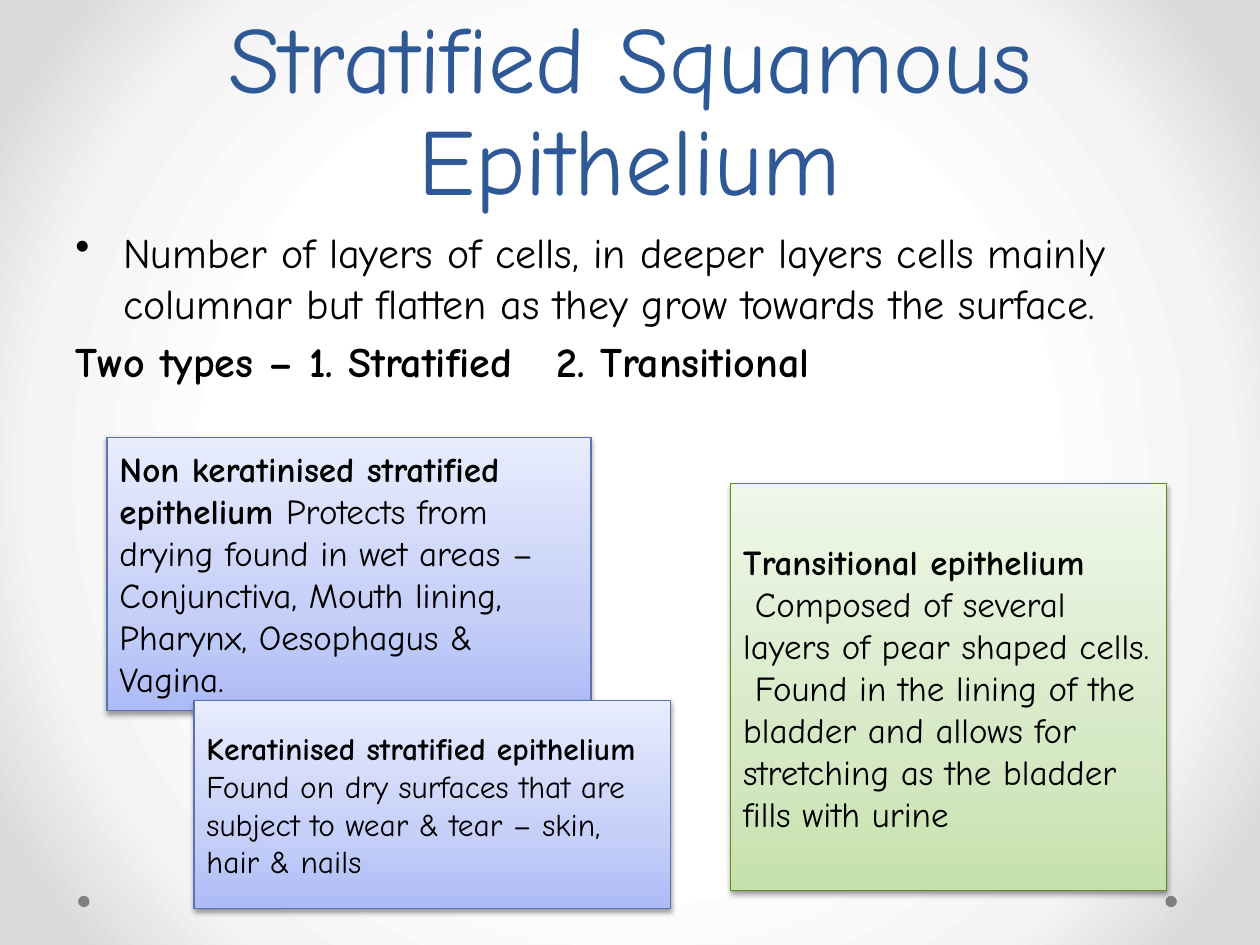
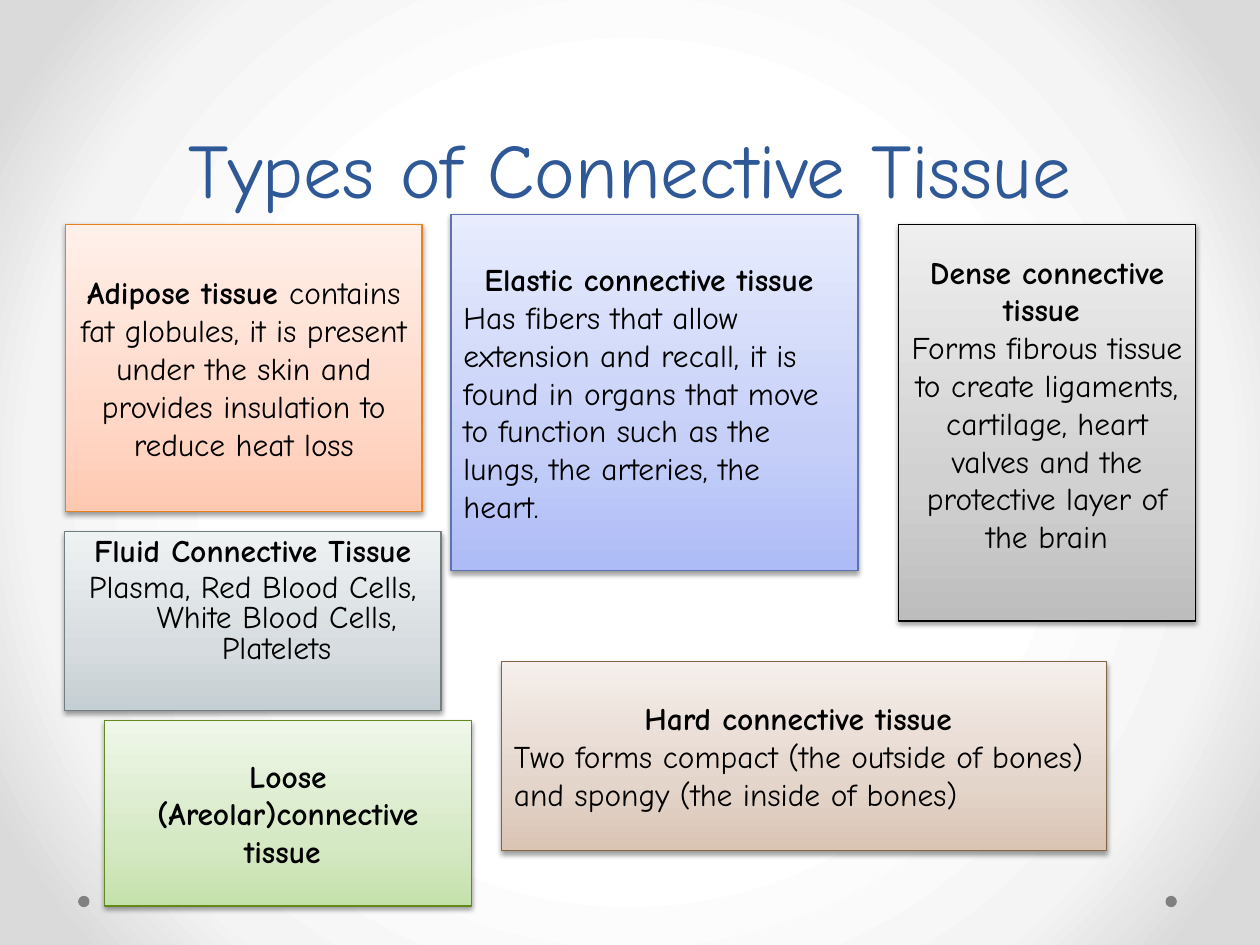
from dataclasses import dataclass
from typing import Any, NamedTuple

from lxml import etree
from pptx import Presentation
from pptx.dml.color import RGBColor
from pptx.enum.shapes import MSO_SHAPE
from pptx.enum.text import MSO_ANCHOR, PP_ALIGN
from pptx.oxml.ns import qn
from pptx.util import Inches, Pt

RECTANGLE = MSO_SHAPE.RECTANGLE
ELLIPSE = MSO_SHAPE.OVAL
LEFT = PP_ALIGN.LEFT
CENTER = PP_ALIGN.CENTER
TOP = MSO_ANCHOR.TOP
MIDDLE = MSO_ANCHOR.MIDDLE
BOTTOM = MSO_ANCHOR.BOTTOM

FONT = "Comic Neue"
TITLE_COLOR = "2F5897"
TEXT_COLOR = "000000"
DOT_COLOR = "808080"
BACKGROUND_STOPS = ((50, "FFFFFF"), (76, "F4F4F4"), (92, "DADADA"))
DOT_LEFTS = (9.25, 0.62)
HANGING = 0.38


class Box(NamedTuple):
    left: float
    top: float
    width: float
    height: float

    def lengths(self) -> tuple:
        return tuple(Inches(value) for value in self)


class Palette(NamedTuple):
    bottom: str
    middle: str
    top: str
    line: str

    def stops(self) -> tuple:
        return (0, self.bottom), (35, self.middle), (100, self.top)


class Phrase(NamedTuple):
    text: str
    bold: bool = False


@dataclass(frozen=True)
class TextLine:
    phrases: tuple[Phrase, ...]
    alignment: Any = LEFT
    hanging: float = 0
    bullet: str = ""
    tab: float = 0
    line_spacing: Any = None
    space_before: float = 0


@dataclass(frozen=True)
class Card:
    box: Box
    palette: Palette
    size: int
    lines: tuple[TextLine, ...]
    anchor: Any = MIDDLE
    bottom_margin: float = 0.05


BLUE = Palette("ADBBF6", "C5CFF8", "E8ECFD", "5C72B2")
GREEN = Palette("C5E1AB", "D6E9C5", "EFF7E9", "62891C")
ORANGE = Palette("FFC9B1", "FFD8C8", "FFF0EA", "E6811C")
SLATE = Palette("C5CED2", "D6DCDF", "EFF2F3", "727D82")
GRAY = Palette("BDBDBD", "D1D1D1", "EEEEEE", "000000")
BROWN = Palette("DAC4B4", "E4D5CB", "F5EFEB", "836445")

TITLE_BOX = Box(0.5, 0, 9, 1.75)
BODY_BOX = Box(0.5, 1.75, 9, 4.95)


def color(value: str) -> RGBColor:
    return RGBColor.from_string(value)


def set_values(target: Any, values: dict) -> None:
    for name, value in values.items():
        setattr(target, name, value)


def heading(text: str, alignment: Any = LEFT) -> TextLine:
    return TextLine((Phrase(text, True),), alignment)


def plain(text: str, alignment: Any = LEFT) -> TextLine:
    return TextLine((Phrase(text),), alignment)


def fluid_line(text: str, bold: bool) -> TextLine:
    return TextLine((Phrase(text, bold),), CENTER, HANGING,
                    line_spacing=0.8, space_before=3.6)


def add_color(parent: Any, value: str) -> Any:
    return etree.SubElement(parent, qn("a:srgbClr"), val=value)


def set_gradient(fill: Any, properties: Any, stops: tuple, circular: bool) -> None:
    fill.solid()
    gradient = etree.Element(qn("a:gradFill"), rotWithShape="1")
    stop_list = etree.SubElement(gradient, qn("a:gsLst"))
    for position, value in stops:
        stop = etree.SubElement(stop_list, qn("a:gs"), pos=str(position * 1000))
        add_color(stop, value)
    if circular:
        shade = etree.SubElement(gradient, qn("a:path"), path="circle")
        etree.SubElement(shade, qn("a:fillToRect"), {side: "50000" for side in "ltrb"})
    else:
        etree.SubElement(gradient, qn("a:lin"), ang="16200000", scaled="0")
    properties.replace(properties.find(qn("a:solidFill")), gradient)


def add_shadow(shape: Any) -> None:
    effects = shape.element.spPr.find(qn("a:effectLst"))
    shadow = etree.SubElement(effects, qn("a:outerShdw"), blurRad=str(Pt(3.1)),
                              dist=str(Pt(1.6)), dir="5400000", rotWithShape="0")
    etree.SubElement(add_color(shadow, "000000"), qn("a:alpha"), val="38000")


def set_paragraph_layout(paragraph: Any, line: TextLine) -> None:
    set_values(paragraph, {
        "alignment": line.alignment,
        "line_spacing": line.line_spacing,
        "space_before": Pt(line.space_before),
    })
    properties = paragraph._p.get_or_add_pPr()
    if line.hanging:
        properties.set("marL", str(Inches(line.hanging)))
        properties.set("indent", str(-Inches(line.hanging)))
    if line.bullet:
        etree.SubElement(properties, qn("a:buChar"), char=line.bullet)
    if line.tab:
        tabs = etree.SubElement(properties, qn("a:tabLst"))
        etree.SubElement(tabs, qn("a:tab"), pos=str(Inches(line.tab)), algn="l")


def write_lines(shape: Any, lines: tuple, size: int, text_color: str,
                anchor: Any, bottom_margin: float = 0.05) -> None:
    frame = shape.text_frame
    set_values(frame, {
        "word_wrap": True,
        "vertical_anchor": anchor,
        "margin_bottom": Inches(bottom_margin),
    })
    for index, line in enumerate(lines):
        paragraph = frame.add_paragraph() if index else frame.paragraphs[0]
        set_paragraph_layout(paragraph, line)
        for phrase in line.phrases:
            run = paragraph.add_run()
            run.text = phrase.text
            set_values(run.font, {"name": FONT, "size": Pt(size), "bold": phrase.bold})
            run.font.color.rgb = color(text_color)


def add_text(slide: Any, box: Box, lines: tuple, size: int,
             text_color: str, anchor: Any) -> None:
    shape = slide.shapes.add_textbox(*box.lengths())
    write_lines(shape, lines, size, text_color, anchor)


def add_card(slide: Any, card: Card) -> None:
    shape = slide.shapes.add_shape(RECTANGLE, *card.box.lengths())
    shape.shadow.inherit = False
    set_gradient(shape.fill, shape.element.spPr, card.palette.stops(), False)
    shape.line.color.rgb = color(card.palette.line)
    shape.line.width = Pt(0.75)
    add_shadow(shape)
    write_lines(shape, card.lines, card.size, TEXT_COLOR, card.anchor, card.bottom_margin)


def add_dots(slide: Any) -> None:
    for left in DOT_LEFTS:
        dot = slide.shapes.add_shape(ELLIPSE, *Box(left, 7.11, 0.09, 0.09).lengths())
        dot.shadow.inherit = False
        dot.fill.solid()
        dot.fill.fore_color.rgb = color(DOT_COLOR)
        dot.line.fill.background()


def add_slide(presentation: Any, title: str, title_size: int,
              body: tuple, cards: tuple) -> None:
    slide = presentation.slides.add_slide(presentation.slide_layouts[6])
    add_dots(slide)
    title_line = TextLine((Phrase(title),), CENTER, line_spacing=Pt(58))
    add_text(slide, TITLE_BOX, (title_line,), title_size, TITLE_COLOR, BOTTOM)
    if body:
        add_text(slide, BODY_BOX, body, 24, TEXT_COLOR, TOP)
    for card in cards:
        add_card(slide, card)


EPITHELIUM_BODY = (
    TextLine((Phrase("Number of layers of cells, in deeper layers cells mainly columnar "
                     "but flatten as they grow towards the surface."),),
             hanging=HANGING, bullet="•", space_before=4.8),
    TextLine((Phrase("Two types – 1. Stratified\t2. Transitional", True),),
             tab=3.82, space_before=4.8),
)

EPITHELIUM_CARDS = (
    Card(Box(0.85, 3.47, 3.84, 2.17), BLUE, 20, (
        TextLine((Phrase("Non keratinised stratified epithelium ", True),
                  Phrase("Protects from drying found in wet areas – Conjunctiva, "
                         "Mouth lining, Pharynx, Oesophagus & Vagina."))),
    )),
    Card(Box(5.8, 3.84, 3.46, 3.23), GREEN, 20, (
        heading("Transitional epithelium"),
        plain(" Composed of several layers of pear shaped cells."),
        plain(" Found in the lining of the bladder and allows for stretching "
              "as the bladder fills with urine"),
    )),
    Card(Box(1.54, 5.56, 3.78, 1.65), BLUE, 18, (
        heading("Keratinised stratified epithelium"),
        plain("Found on dry surfaces that are subject to wear & tear – skin, hair & nails"),
    )),
)

CONNECTIVE_CARDS = (
    Card(Box(0.52, 1.78, 2.83, 2.28), ORANGE, 18, (
        TextLine((Phrase("Adipose tissue ", True),
                  Phrase("contains fat globules, it is present under the skin and "
                         "provides insulation to reduce heat loss")), CENTER),
    )),
    Card(Box(0.51, 4.22, 2.99, 1.42), SLATE, 18, (
        fluid_line("Fluid Connective Tissue", True),
        fluid_line("Plasma, Red Blood Cells, White Blood Cells, Platelets", False),
    ), TOP),
    Card(Box(7.13, 1.78, 2.36, 3.15), GRAY, 18, (
        heading("Dense connective tissue ", CENTER),
        plain("Forms fibrous tissue to create ligaments, cartilage, heart valves "
              "and the protective layer of the brain", CENTER),
    ), bottom_margin=0.35),
    Card(Box(3.58, 1.7, 3.23, 2.83), BLUE, 18, (
        heading("Elastic connective tissue ", CENTER),
        plain("Has fibers that allow extension and recall, it is found in organs that "
              "move to function such as the lungs, the arteries, the heart."),
    )),
    Card(Box(0.83, 5.72, 2.91, 1.47), GREEN, 18, (
        heading("Loose (Areolar)connective tissue ", CENTER),
    )),
    Card(Box(3.98, 5.25, 4.8, 1.5), BROWN, 18, (
        heading("Hard connective tissue ", CENTER),
        plain("Two forms compact (the outside of bones) and spongy (the inside of bones)"),
    )),
)


def main() -> None:
    presentation = Presentation()
    presentation.slide_width = Inches(10)
    presentation.slide_height = Inches(7.5)
    master = presentation.slide_master
    fill = master.background.fill
    fill.solid()
    background = master.element.find(".//" + qn("p:bgPr"))
    set_gradient(fill, background, BACKGROUND_STOPS, True)
    add_slide(presentation, "Stratified Squamous Epithelium", 54,
              EPITHELIUM_BODY, EPITHELIUM_CARDS)
    add_slide(presentation, "Types of Connective Tissue", 44, (), CONNECTIVE_CARDS)
    presentation.save("out.pptx")


if __name__ == "__main__":
    main()
